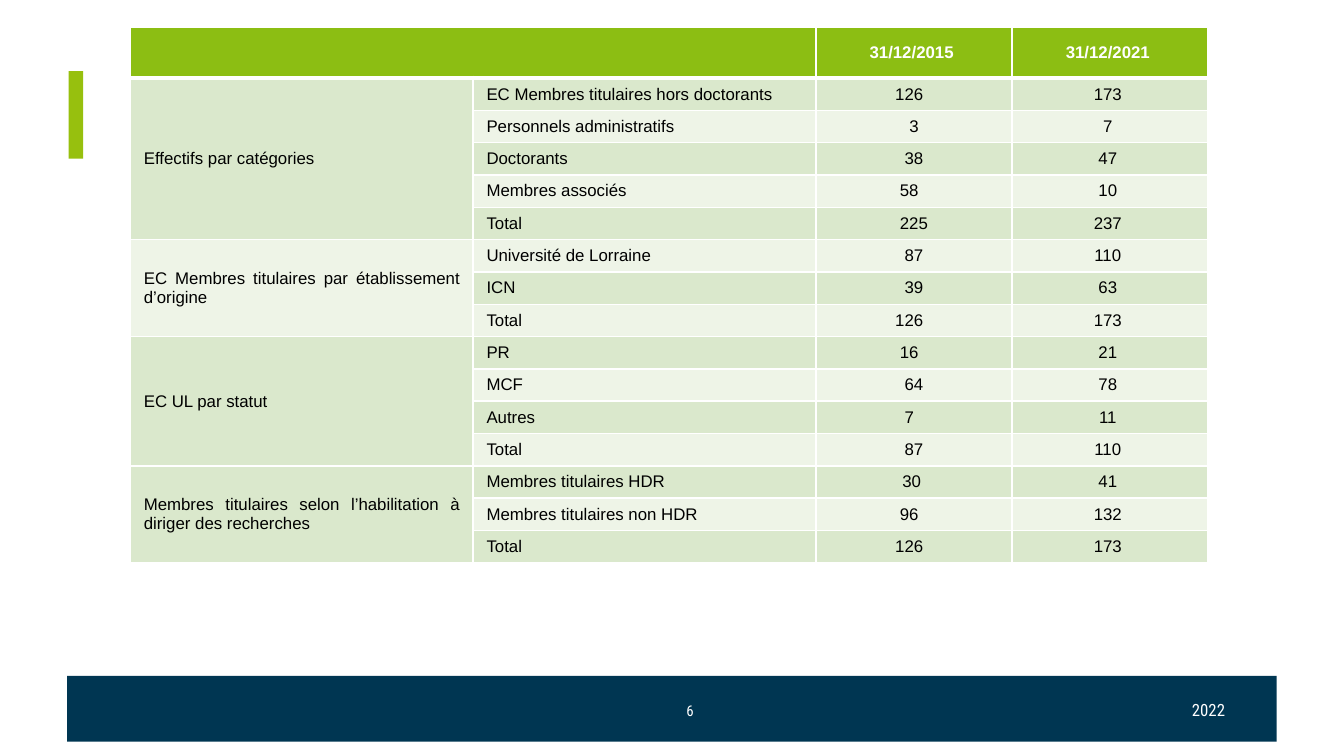
from dataclasses import dataclass

import pptx
import pptx.dml.color
import pptx.enum.shapes
import pptx.enum.text
import pptx.oxml
import pptx.oxml.ns
import pptx.util

ALIGN = pptx.enum.text.PP_ALIGN
ANCHOR = pptx.enum.text.MSO_ANCHOR
WIDTH = pptx.util.Inches(10)
HEIGHT = WIDTH * 9 // 16


@dataclass(frozen=True)
class Theme:
    navy: str = "003652"
    accent: str = "97C00E"
    header: str = "8CBE13"
    bands: tuple[str, str] = ("DAE8CC", "EEF4E7")
    white: str = "FFFFFF"
    black: str = "000000"
    body_font: str = "Arial"
    footer_font: str = "Roboto Condensed"
    body_size: float = 9
    page_size: float = 8
    rule: float = 1
    header_rule: float = 3


@dataclass(frozen=True)
class Box:
    """Percentages of the slide's width and height."""
    x: float
    y: float
    w: float
    h: float

    def emu(self) -> tuple[int, int, int, int]:
        return across(self.x), down(self.y), across(self.w), down(self.h)


@dataclass(frozen=True)
class Group:
    label: str
    rows: tuple[tuple[str, str, str], ...]


THEME = Theme()
COLUMNS = (25.5, 25.5, 14.6, 14.6)
HEADER_ROW, BODY_ROW = 6.76, 4.28
TABLE_X, TABLE_Y = 9.7, 3.56
BARS = (
    (Box(5, 89.42, 90, 8.71), THEME.navy),
    (Box(5.1, 9.42, 1.1, 11.56), THEME.accent),
)
TIE = "~"
NBSP = chr(160)
HEADINGS = ("31/12/2015~", "31/12/2021~")
GROUPS = (
    Group("Effectifs par catégories~", (
        ("EC Membres titulaires hors doctorants~", "126~~", "173~"),
        ("Personnels administratifs~", "~3~", "7~"),
        ("Doctorants~", "~38~", "47~"),
        ("Membres associés~", "58~~", "10~"),
        ("Total~", "~225~", "237~"),
    )),
    Group("EC Membres titulaires par établissement d’origine", (
        ("Université de Lorraine~", "~87~", "110~"),
        ("ICN~", "~39~", "63~"),
        ("Total~", "126~~", "173~"),
    )),
    Group("EC UL par statut~", (
        ("PR~", "16~~", "21~"),
        ("MCF~", "~64~", "78~"),
        ("Autres~", "7~~", "11~"),
        ("Total~", "~87~", "110~"),
    )),
    Group("Membres titulaires selon l’habilitation à diriger des recherches~~", (
        ("Membres titulaires HDR~", "30~", "41~"),
        ("Membres titulaires non HDR~", "96~~", "132~"),
        ("Total~", "126~~", "173~"),
    )),
)


def across(share: float) -> int:
    return round(WIDTH * share / 100)


def down(share: float) -> int:
    return round(HEIGHT * share / 100)


def rgb(color: str) -> pptx.dml.color.RGBColor:
    return pptx.dml.color.RGBColor.from_string(color)


def write(tf, text: str, *, size: float = THEME.body_size, font: str = THEME.body_font,
          color: str = THEME.black, bold: bool = False, align=ALIGN.LEFT) -> None:
    p = tf.paragraphs[0]
    p.alignment = align
    r = p.add_run()
    r.text = text.replace(TIE, NBSP)
    r.font.size = pptx.util.Pt(size)
    r.font.name = font
    r.font.bold = bold
    r.font.color.rgb = rgb(color)


def draw_bar(s, box: Box, color: str) -> None:
    sp = s.shapes.add_shape(pptx.enum.shapes.MSO_SHAPE.RECTANGLE, *box.emu())
    sp.shadow.inherit = False
    sp.fill.solid()
    sp.fill.fore_color.rgb = rgb(color)
    sp.line.fill.background()


def draw_footer(s, box: Box, text: str, size: float, anchor, align) -> None:
    tf = s.shapes.add_textbox(*box.emu()).text_frame
    tf.word_wrap = True
    tf.vertical_anchor = anchor
    write(tf, text, size=size, font=THEME.footer_font, color=THEME.white, align=align)


def style_cell(cell, fill: str, top: float, bottom: float) -> None:
    cell.vertical_anchor = ANCHOR.MIDDLE
    cell.margin_top = cell.margin_bottom = pptx.util.Inches(0.04)
    cell.fill.solid()
    cell.fill.fore_color.rgb = rgb(fill)
    tcPr = cell.fill._xPr
    widths = {"L": THEME.rule, "R": THEME.rule, "T": top, "B": bottom}
    for i, (side, width) in enumerate(widths.items()):
        tcPr.insert(i, pptx.oxml.parse_xml(
            f'<a:ln{side} {pptx.oxml.ns.nsdecls("a")} w="{pptx.util.Pt(width)}">'
            f'<a:solidFill><a:srgbClr val="{THEME.white}"/></a:solidFill></a:ln{side}>'))


def draw_table(s) -> None:
    count = sum(len(group.rows) for group in GROUPS)
    box = Box(TABLE_X, TABLE_Y, sum(COLUMNS), HEADER_ROW + count * BODY_ROW)
    table = s.shapes.add_table(count + 1, len(COLUMNS), *box.emu()).table
    for column, share in zip(table.columns, COLUMNS):
        column.width = across(share)
    for i, row in enumerate(table.rows):
        row.height = down(BODY_ROW if i else HEADER_ROW)
        fill = THEME.bands[(i - 1) % 2] if i else THEME.header
        for cell in row.cells:
            style_cell(cell, fill, THEME.header_rule if i == 1 else THEME.rule,
                       THEME.rule if i else THEME.header_rule)

    table.cell(0, 0).merge(table.cell(0, 1))
    for j, heading in enumerate(HEADINGS, 2):
        write(table.cell(0, j).text_frame, heading, color=THEME.white,
              bold=True, align=ALIGN.CENTER)
    first = 1
    for group in GROUPS:
        label = table.cell(first, 0)
        label.merge(table.cell(first + len(group.rows) - 1, 0))
        write(label.text_frame, group.label, align=ALIGN.JUSTIFY)
        for i, values in enumerate(group.rows, first):
            for j, value in enumerate(values, 1):
                write(table.cell(i, j).text_frame, value,
                      align=ALIGN.JUSTIFY if j == 1 else ALIGN.CENTER)
        first += len(group.rows)


def main() -> None:
    prs = pptx.Presentation()
    prs.slide_width, prs.slide_height = WIDTH, HEIGHT
    s = prs.slides.add_slide(prs.slide_layouts[6])
    for box, color in BARS:
        draw_bar(s, box, color)
    draw_footer(s, Box(47.7, 91.38, 7.3, 5.33), "6", THEME.page_size,
                ANCHOR.MIDDLE, ALIGN.CENTER)
    draw_footer(s, Box(87.7, 91.73, 16.2, 5.33), "2022", THEME.body_size,
                ANCHOR.TOP, ALIGN.LEFT)
    draw_table(s)
    prs.save("out.pptx")


if __name__ == "__main__":
    main()
